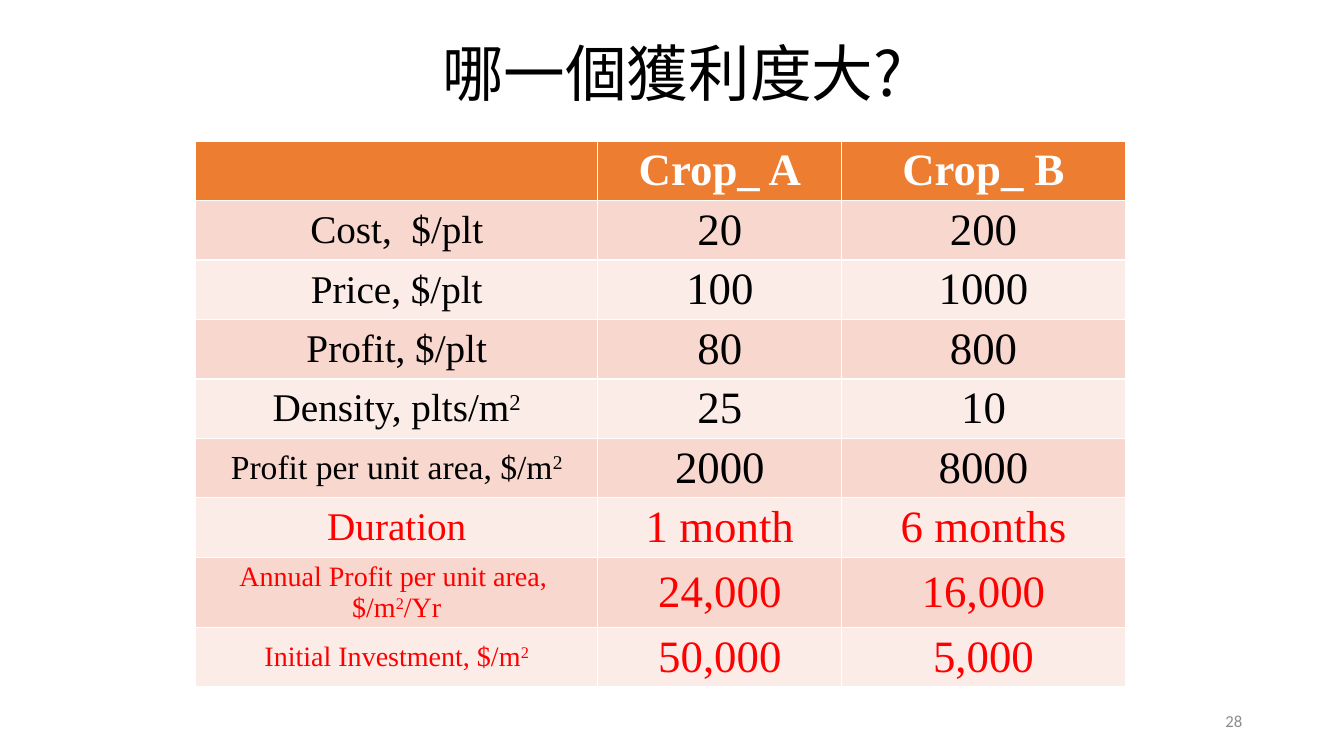
import pptx
import pptx.dml.color
import pptx.enum.text
import pptx.oxml.ns
import pptx.util
from lxml import etree
from pptx.dml.color import RGBColor
from pptx.util import Inches

BLACK = RGBColor(0x00, 0x00, 0x00)
WHITE = RGBColor(0xFF, 0xFF, 0xFF)
RED = RGBColor(0xFF, 0x00, 0x00)
GRAY = RGBColor(0x8C, 0x8C, 0x8C)
ORANGE = RGBColor(0xED, 0x7D, 0x31)
BANDS = (RGBColor(0xF8, 0xD7, 0xCE), RGBColor(0xFC, 0xEC, 0xE8))

CJK_FONT = "Noto Sans CJK SC"
COLUMN_WIDTHS = (3.99, 2.42, 2.81)
ROW_HEIGHT = 0.59
VALUE_SIZE = 32

HEADERS = ("", "Crop_ A", "Crop_ B")
# Label (superscripts between carets), label size, colour, crop A, crop B
CROP_ROWS = (
    ("Cost,  $/plt", 28, BLACK, "20", "200"),
    ("Price, $/plt", 28, BLACK, "100", "1000"),
    ("Profit, $/plt", 28, BLACK, "80", "800"),
    ("Density, plts/m^2^", 28, BLACK, "25", "10"),
    ("Profit per unit area, $/m^2^", 24, BLACK, "2000", "8000"),
    ("Duration", 28, RED, "1 month", "6 months"),
    ("Annual Profit per unit area,  $/m^2^/Yr", 20, RED, "24,000", "16,000"),
    ("Initial Investment, $/m^2^", 20, RED, "50,000", "5,000"),
)


def place(shape, left, top, width, height):
    shape.left, shape.top = Inches(left), Inches(top)
    shape.width, shape.height = Inches(width), Inches(height)


def format_paragraph(paragraph, font_name, size, color, alignment, bold=False):
    paragraph.alignment = alignment
    paragraph.font.name = font_name
    paragraph.font.size = pptx.util.Pt(size)
    paragraph.font.color.rgb = color
    paragraph.font.bold = bold


def add_title(slide, text, *box):
    title = slide.shapes.title
    place(title, *box)
    title.text_frame.vertical_anchor = pptx.enum.text.MSO_ANCHOR.MIDDLE
    paragraph = title.text_frame.paragraphs[0]
    run = paragraph.add_run()
    run.text = text
    format_paragraph(paragraph, CJK_FONT, 44, BLACK, pptx.enum.text.PP_ALIGN.CENTER)
    paragraph.line_spacing = 0.9
    paragraph.space_before = paragraph.space_after = pptx.util.Pt(6)
    run_properties = run._r.get_or_add_rPr()
    etree.SubElement(run_properties, pptx.oxml.ns.qn("a:ea"), typeface=CJK_FONT)


def fill_cell(cell, text, size, color, fill, bold=False):
    """Write centred text, raising the parts between carets."""
    cell.fill.solid()
    cell.fill.fore_color.rgb = fill
    cell.vertical_anchor = pptx.enum.text.MSO_ANCHOR.MIDDLE
    cell.margin_top = cell.margin_bottom = Inches(0.04)
    paragraph = cell.text_frame.paragraphs[0]
    format_paragraph(paragraph, "Times New Roman", size, color,
                     pptx.enum.text.PP_ALIGN.CENTER, bold)
    for index, part in enumerate(text.split("^")):
        if part:
            run = paragraph.add_run()
            run.text = part
            if index % 2:
                run._r.get_or_add_rPr().set("baseline", "30000")


def add_crop_table(slide, left, top):
    row_count = len(CROP_ROWS) + 1
    table = slide.shapes.add_table(
        row_count, len(HEADERS), Inches(left), Inches(top),
        Inches(sum(COLUMN_WIDTHS)), Inches(ROW_HEIGHT * row_count)).table
    for column, width in zip(table.columns, COLUMN_WIDTHS):
        column.width = Inches(width)
    for column, header in enumerate(HEADERS):
        fill_cell(table.cell(0, column), header, VALUE_SIZE, WHITE, ORANGE, bold=True)
    for row, (label, label_size, color, *values) in enumerate(CROP_ROWS, start=1):
        band = BANDS[(row - 1) % 2]
        fill_cell(table.cell(row, 0), label, label_size, color, band)
        for column, value in enumerate(values, start=1):
            fill_cell(table.cell(row, column), value, VALUE_SIZE, color, band)


def add_page_number(slide, number, *box):
    text_box = slide.shapes.add_textbox(*map(Inches, box))
    text_frame = text_box.text_frame
    text_frame.word_wrap = True
    text_frame.vertical_anchor = pptx.enum.text.MSO_ANCHOR.MIDDLE
    text_frame.text = number
    format_paragraph(text_frame.paragraphs[0], "Calibri", 12, GRAY,
                     pptx.enum.text.PP_ALIGN.RIGHT)


def main():
    presentation = pptx.Presentation()
    presentation.slide_width = Inches(13.33)
    presentation.slide_height = Inches(7.5)
    slide = presentation.slides.add_slide(presentation.slide_layouts[5])
    add_title(slide, "哪一個獲利度大?", 2.17, 0.13, 9, 1.25)
    add_crop_table(slide, 1.94, 1.4)
    add_page_number(slide, "28", 9.42, 6.95, 3, 0.4)
    presentation.save("out.pptx")


if __name__ == "__main__":
    main()
